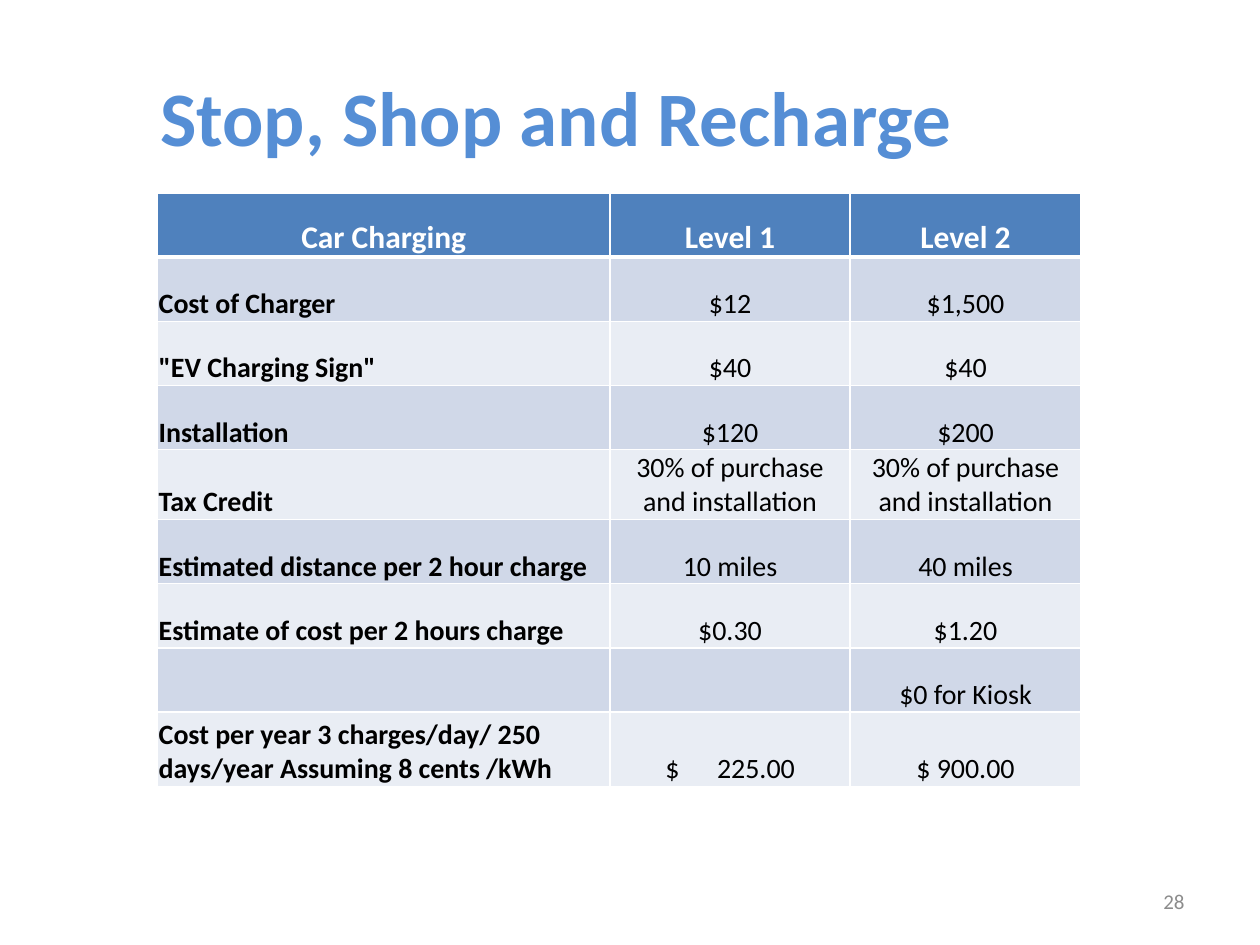
import pptx
import pptx.util
import pptx.dml.color
import pptx.enum.text
import pptx.oxml.ns
from dataclasses import dataclass
from lxml import etree

ALIGN = pptx.enum.text.PP_ALIGN
ANCHOR = pptx.enum.text.MSO_ANCHOR
inch = pptx.util.Inches


@dataclass(frozen=True)
class Theme:
    font: str = "Calibri"
    title: str = "558ED5"
    head: str = "4F81BD"
    bands: tuple = ("D0D8E8", "E9EDF4")
    white: str = "FFFFFF"
    ink: str = "000000"
    grey: str = "8C8C8C"
    big: int = 44
    mid: int = 18
    text: int = 16
    small: int = 12


THEME = Theme()
WIDE, HIGH = 10, 7.5
ROWS = [
    ("Car Charging", "Level 1", "Level 2"),
    ("Cost of Charger", "$12", "$1,500"),
    ('"EV Charging Sign"', "$40", "$40"),
    ("Installation", "$120", "$200"),
    ("Tax Credit",) + ("30% of purchase\nand installation",) * 2,
    ("Estimated distance per 2 hour charge", "10 miles", "40 miles"),
    ("Estimate of cost per 2 hours charge", "$0.30", "$1.20"),
    ("", "", "$0 for Kiosk"),
    ("Cost per year 3 charges/day/ 250 days/year Assuming 8 cents /kWh",
     "$\t225.00", "$ 900.00"),
]


def rgb(code):
    return pptx.dml.color.RGBColor.from_string(code)


def style(frame, size, color, bold=False, align=ALIGN.LEFT):
    for para in frame.paragraphs:
        para.alignment = align
        font = para.font
        for font in [para.font] + [run.font for run in para.runs]:
            font.name, font.size, font.bold = THEME.font, pptx.util.Pt(size), bold
            font.color.rgb = rgb(color)


def add_tab(para, pos):
    props = para._p.get_or_add_pPr()
    tabs = etree.SubElement(props, pptx.oxml.ns.qn("a:tabLst"))
    etree.SubElement(tabs, pptx.oxml.ns.qn("a:tab"), pos=str(inch(pos)), algn="l")


def add_edges(cell, widths):
    """Rule the cell's left, right, top and bottom in white."""
    props = cell._tc.get_or_add_tcPr()
    for spot, (side, width) in enumerate(zip("LRTB", widths)):
        line = etree.Element(pptx.oxml.ns.qn("a:ln" + side),
                             w=str(pptx.util.Pt(width)))
        fill = etree.SubElement(line, pptx.oxml.ns.qn("a:solidFill"))
        etree.SubElement(fill, pptx.oxml.ns.qn("a:srgbClr"), val=THEME.white)
        props.insert(spot, line)


def place(shape, box):
    shape.left, shape.top, shape.width, shape.height = map(inch, box)


def add_title(slide, box):
    shape = slide.shapes.title
    place(shape, box)
    frame = shape.text_frame
    frame.text = "Stop, Shop and Recharge"
    frame.vertical_anchor = ANCHOR.TOP
    frame.auto_size = pptx.enum.text.MSO_AUTO_SIZE.NONE
    style(frame, THEME.big, THEME.title, True)


def fill_cell(cell, text, row, col):
    head = row == 0
    cell.fill.solid()
    cell.fill.fore_color.rgb = rgb(THEME.head if head else THEME.bands[(row - 1) % 2])
    cell.margin_left = cell.margin_right = cell.margin_top = inch(0.01)
    cell.margin_bottom = 0
    cell.vertical_anchor = ANCHOR.BOTTOM
    add_edges(cell, (1, 1, 3 if row == 1 else 1, 3 if head else 1))
    frame = cell.text_frame
    frame.text = text
    align = ALIGN.CENTER if head or col else ALIGN.LEFT
    # An amount set apart from its currency sign
    if "\t" in text:
        align = ALIGN.LEFT
        cell.margin_left = inch(0.44)
        add_tab(frame.paragraphs[0], 0.41)
    style(frame, THEME.mid if head else THEME.text,
          THEME.white if head else THEME.ink, head or col == 0, align)


def add_costs(slide, box):
    wide, high = box[2:]
    shares = (0.49, 0.26, 0.25)
    table = slide.shapes.add_table(len(ROWS), len(shares), *map(inch, box)).table
    for col, share in zip(table.columns, shares):
        col.width = inch(wide * share)
    # The last row is a little taller than the equal rows above it
    step = 0.51
    for row in table.rows:
        row.height = inch(step)
    table.rows[len(ROWS) - 1].height = inch(high - step * (len(ROWS) - 1))
    for row, texts in enumerate(ROWS):
        for col, text in enumerate(texts):
            fill_cell(table.cell(row, col), text, row, col)


def add_number(slide, box):
    frame = slide.shapes.add_textbox(*map(inch, box)).text_frame
    frame.word_wrap = True
    frame.vertical_anchor = ANCHOR.MIDDLE
    frame.text = "28"
    style(frame, THEME.small, THEME.grey, align=ALIGN.RIGHT)


def main():
    deck = pptx.Presentation()
    deck.slide_width, deck.slide_height = inch(WIDE), inch(HIGH)
    slide = deck.slides.add_slide(deck.slide_layouts[5])
    # Heading, cost table, page number
    add_title(slide, (1.17, HIGH / 15, 7.75, HIGH / 6))
    add_costs(slide, (WIDE / 8, 1.53, 7.33, 4.67))
    add_number(slide, (7.17, 6.95, 2.33, 0.4))
    deck.save("out.pptx")


if __name__ == "__main__":
    main()
